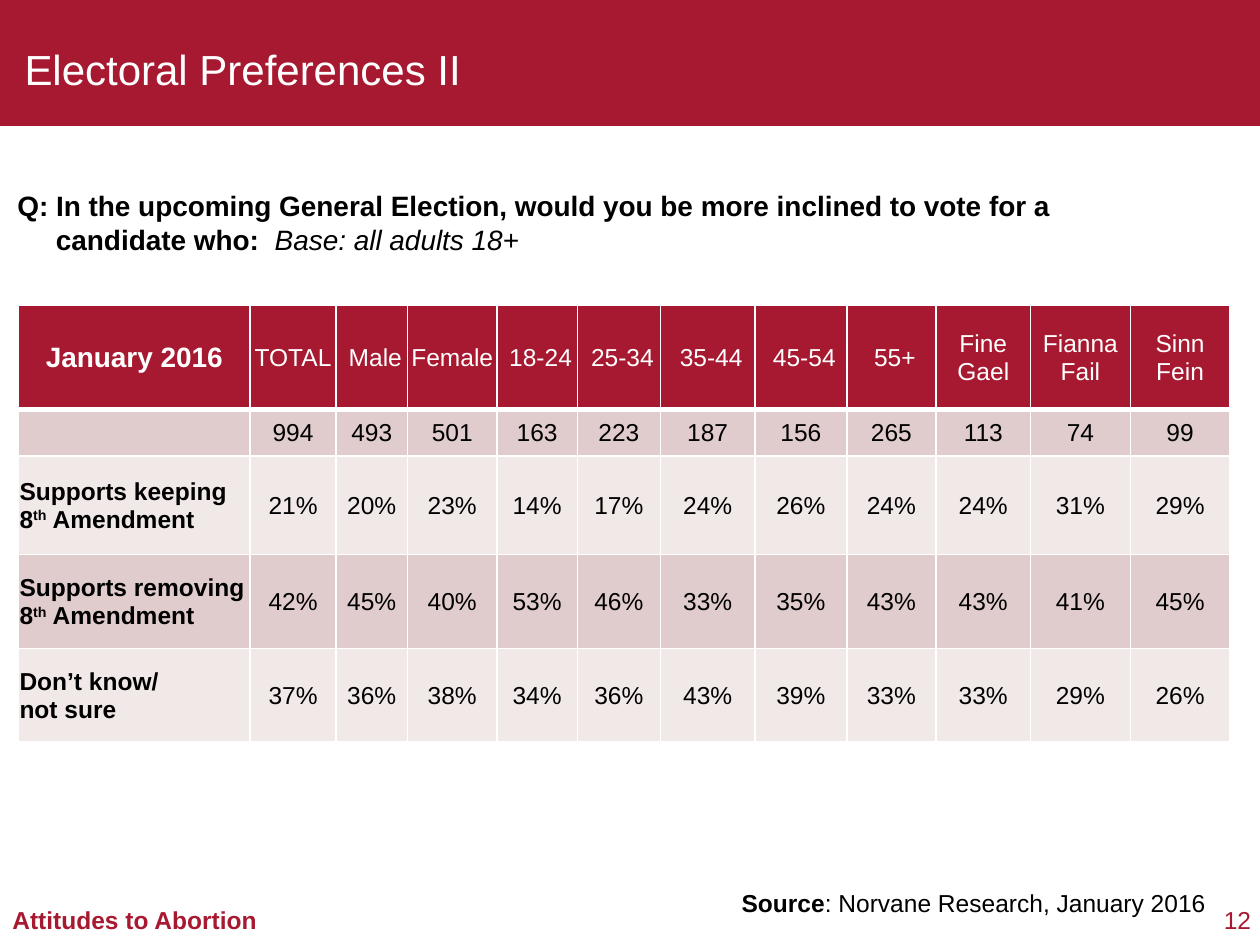
from pptx import Presentation
from pptx.dml.color import RGBColor
from pptx.enum.shapes import MSO_SHAPE
from pptx.enum.text import MSO_ANCHOR, PP_ALIGN
from pptx.oxml.ns import qn
from pptx.util import Pt
from lxml.etree import SubElement

# Content
FONT = "Arial"
COLORS = {"red": "A71930", "white": "FFFFFF", "black": "000000",
          "dark_band": "E1CCCD", "light_band": "F1E8E8"}
TITLE = "Electoral Preferences II"
QUESTION = [("Q: In the upcoming General Election, would you be more inclined to vote for a", "bold"),
            ("\n", ""),
            ("candidate who:  ", "bold"),
            ("Base: all adults 18+", "italic")]
SOURCE = [("Source", "bold"), (": Norvane Research, January 2016", "")]
FOOTER = [("Attitudes to Abortion", "bold")]
PAGE = [("12", "")]

HEADER = ["January 2016", "TOTAL", "Male", "Female", "18-24", "25-34", "35-44",
          "45-54", "55+", "Fine Gael", "Fianna Fail", "Sinn Fein"]
NUDGED = {"Male", "18-24", "25-34", "35-44", "45-54", "55+"}
ROWS = [
    ([], [994, 493, 501, 163, 223, 187, 156, 265, 113, 74, 99]),
    ([("Supports keeping 8", "bold"), ("th", "bold super"), (" Amendment", "bold")],
     [21, 20, 23, 14, 17, 24, 26, 24, 24, 31, 29]),
    ([("Supports removing 8", "bold"), ("th", "bold super"), (" Amendment", "bold")],
     [42, 45, 40, 53, 46, 33, 35, 43, 43, 41, 45]),
    ([("Don’t know/", "bold"), ("\n", ""), ("not sure", "bold")],
     [37, 36, 38, 34, 36, 43, 39, 33, 33, 29, 26]),
]

# Layout in points
COLUMN_WIDTHS = [132.5, 49, 41, 51, 46, 47.5, 54, 52.5, 51, 54, 57, 57]
ROW_HEIGHTS = [59.5, 26.5, 56.5, 53.5, 53.5]
TABLE_LEFT, TABLE_TOP = 10.5, 174.5
CELL_INSET = 0.7
NUDGE = 4
HANGING = 22


def color(name):
    return RGBColor.from_string(COLORS[name])


def write(paragraph, spans, size, ink, align=PP_ALIGN.LEFT):
    paragraph.alignment = align
    for text, style in spans:
        if text == "\n":
            paragraph.add_line_break()
            continue
        span = paragraph.add_run()
        span.text = text
        span.font.name, span.font.size = FONT, Pt(size)
        span.font.color.rgb = color(ink)
        span.font.bold = "bold" in style
        span.font.italic = "italic" in style
        if "super" in style:
            span.font._element.set("baseline", "30000")


def add_text(slide, place, spans, size, ink, align=PP_ALIGN.LEFT, wrap=True):
    box = slide.shapes.add_textbox(*[Pt(value) for value in place])
    box.text_frame.word_wrap = wrap
    write(box.text_frame.paragraphs[0], spans, size, ink, align)
    return box.text_frame


def add_border(cell, side, width):
    line = SubElement(cell._tc.get_or_add_tcPr(), qn(f"a:ln{side}"), w=str(Pt(width)))
    fill = SubElement(line, qn("a:solidFill"))
    SubElement(fill, qn("a:srgbClr"), val=COLORS["white"])


def fill_cell(cell, row, spans, size, ink, band, align, nudge=0):
    cell.margin_left = Pt(CELL_INSET + nudge)
    cell.margin_right = cell.margin_top = Pt(CELL_INSET)
    cell.margin_bottom = Pt(0)
    cell.vertical_anchor = MSO_ANCHOR.MIDDLE
    # The rule under the header is heavier
    for side, heavy_row in (("L", None), ("R", None), ("T", 1), ("B", 0)):
        add_border(cell, side, 3 if row == heavy_row else 1)
    cell.fill.solid()
    cell.fill.fore_color.rgb = color(band)
    write(cell.text_frame.paragraphs[0], spans, size, ink, align)


def add_results(slide):
    frame = slide.shapes.add_table(len(ROW_HEIGHTS), len(COLUMN_WIDTHS),
                                   Pt(TABLE_LEFT), Pt(TABLE_TOP),
                                   Pt(sum(COLUMN_WIDTHS)), Pt(sum(ROW_HEIGHTS)))
    table = frame.table
    for column, width in zip(table.columns, COLUMN_WIDTHS):
        column.width = Pt(width)
    for row, height in zip(table.rows, ROW_HEIGHTS):
        row.height = Pt(height)

    # Header row
    for index, name in enumerate(HEADER):
        size, style = (14, "") if index else (16, "bold")
        fill_cell(table.cell(0, index), 0, [(name, style)], size, "white", "red",
                  PP_ALIGN.CENTER, NUDGE if name in NUDGED else 0)

    # Sample sizes, then percentages
    for number, (label, values) in enumerate(ROWS, start=1):
        band = "dark_band" if number % 2 else "light_band"
        unit = "" if number == 1 else "%"
        fill_cell(table.cell(number, 0), number, label, 14, "black", band, PP_ALIGN.LEFT)
        for index, value in enumerate(values, start=1):
            fill_cell(table.cell(number, index), number, [(f"{value}{unit}", "")],
                      14, "black", band, PP_ALIGN.CENTER)


def main():
    deck = Presentation()
    deck.slide_width, deck.slide_height = Pt(720), Pt(540)
    slide = deck.slides.add_slide(deck.slide_layouts[6])

    # Title band
    band = slide.shapes.add_shape(MSO_SHAPE.RECTANGLE, 0, 0, Pt(720), Pt(72))
    band.shadow.inherit = False
    band.fill.solid()
    band.fill.fore_color.rgb = color("red")
    band.line.fill.background()
    title = add_text(slide, (0, 18.7, 558, 41), [(TITLE, "")], 24, "white")
    title.margin_left = Pt(14)
    title.vertical_anchor = MSO_ANCHOR.MIDDLE

    # Question with hanging indent
    question = add_text(slide, (2.9, 104.4, 715.7, 46), QUESTION, 16, "black")
    properties = question.paragraphs[0]._p.get_or_add_pPr()
    properties.set("marL", str(Pt(HANGING)))
    properties.set("indent", str(-Pt(HANGING)))

    add_results(slide)

    # Source, footer and page number
    add_text(slide, (357.8, 504, 338.4, 24.5), SOURCE, 14, "black", PP_ALIGN.RIGHT)
    add_text(slide, (0, 513.4, 155.5, 24.5), FOOTER, 14, "red", wrap=False)
    page = add_text(slide, (697.7, 517, 17.3, 16.5), PAGE, 14, "red", PP_ALIGN.RIGHT, False)
    page.margin_left = page.margin_right = page.margin_top = page.margin_bottom = 0

    deck.save("out.pptx")


if __name__ == "__main__":
    main()
